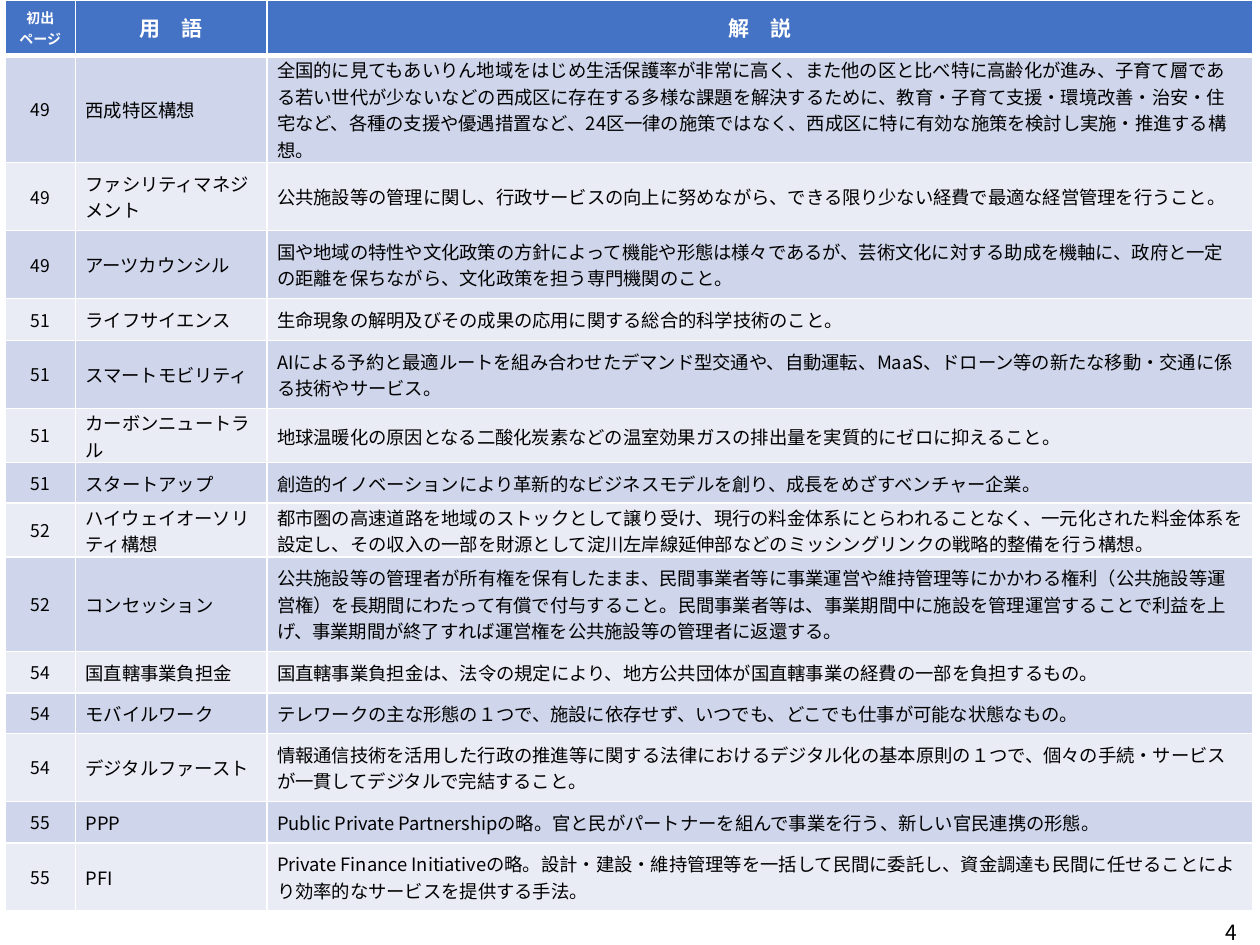
from lxml.etree import SubElement
from pptx import Presentation
from pptx.dml.color import RGBColor
from pptx.enum.text import MSO_ANCHOR as Anchor, PP_ALIGN as Align
from pptx.oxml import parse_xml
from pptx.oxml.ns import nsdecls, qn
from pptx.util import Inches, Pt

WHITE = RGBColor(0xFF, 0xFF, 0xFF)
BLACK = RGBColor(0, 0, 0)
BLUE = RGBColor(0x44, 0x72, 0xC4)
BANDS = RGBColor(0xE9, 0xEB, 0xF5), RGBColor(0xCF, 0xD5, 0xEA)
FACE = "Noto Sans CJK JP"
GRID = 100
WIDE, HIGH = 1000, 750
COLS = 56, 152, 782
HEAD = (("初出\nページ", 8), ("用　語", 12), ("解　説", 12))
HEAD_ROW = 44
LOOSE = 8, 5, 10, 5
SNUG = 8, 1, 8, 0
TIGHT = 8, 1, 1, 0
TERMS = (
    (85, SNUG, "49", "西成特区構想", "全国的に見てもあいりん地域をはじめ生活保護率が非常に高く、また他の区と比べ特に高齢化が進み、子育て層である若い世代が少ないなどの西成区に存在する多様な課題を解決するために、教育・子育て支援・環境改善・治安・住宅など、各種の支援や優遇措置など、24区一律の施策ではなく、西成区に特に有効な施策を検討し実施・推進する構想。"),
    (54, LOOSE, "49", "ファシリティマネジメント", "公共施設等の管理に関し、行政サービスの向上に努めながら、できる限り少ない経費で最適な経営管理を行うこと。"),
    (54, LOOSE, "49", "アーツカウンシル", "国や地域の特性や文化政策の方針によって機能や形態は様々であるが、芸術文化に対する助成を機軸に、政府と一定の距離を保ちながら、文化政策を担う専門機関のこと。"),
    (33, LOOSE, "51", "ライフサイエンス", "生命現象の解明及びその成果の応用に関する総合的科学技術のこと。"),
    (54, LOOSE, "51", "スマートモビリティ", "AIによる予約と最適ルートを組み合わせたデマンド型交通や、自動運転、MaaS、ドローン等の新たな移動・交通に係る技術やサービス。"),
    (43, TIGHT, "51", "カーボンニュートラル", "地球温暖化の原因となる二酸化炭素などの温室効果ガスの排出量を実質的にゼロに抑えること。"),
    (32, TIGHT, "51", "スタートアップ", "創造的イノベーションにより革新的なビジネスモデルを創り、成長をめざすベンチャー企業。"),
    (43, TIGHT, "52", "ハイウェイオーソリティ構想", "都市圏の高速道路を地域のストックとして譲り受け、現行の料金体系にとらわれることなく、一元化された料金体系を設定し、その収入の一部を財源として淀川左岸線延伸部などのミッシングリンクの戦略的整備を行う構想。"),
    (75, LOOSE, "52", "コンセッション", "公共施設等の管理者が所有権を保有したまま、民間事業者等に事業運営や維持管理等にかかわる権利（公共施設等運営権）を長期間にわたって有償で付与すること。民間事業者等は、事業期間中に施設を管理運営することで利益を上げ、事業期間が終了すれば運営権を公共施設等の管理者に返還する。"),
    (33, LOOSE, "54", "国直轄事業負担金", "国直轄事業負担金は、法令の規定により、地方公共団体が国直轄事業の経費の一部を負担するもの。"),
    (32, SNUG, "54", "モバイルワーク", "テレワークの主な形態の１つで、施設に依存せず、いつでも、どこでも仕事が可能な状態なもの。"),
    (54, LOOSE, "54", "デジタルファースト", "情報通信技術を活用した行政の推進等に関する法律におけるデジタル化の基本原則の１つで、個々の手続・サービスが一貫してデジタルで完結すること。"),
    (33, LOOSE, "55", "PPP", "Public Private Partnershipの略。官と民がパートナーを組んで事業を行う、新しい官民連携の形態。"),
    (54, (8, 5, 8, 5), "55", "PFI", "Private Finance Initiativeの略。設計・建設・維持管理等を一括して民間に委託し、資金調達も民間に任せることにより効率的なサービスを提供する手法。"),
)


def span(units):
    """Turn grid units into a length."""
    return Inches(units / GRID)


def write(frame, text, size, color, align, bold=False):
    """Fill a text frame with one paragraph style."""
    frame.text = text
    for para in frame.paragraphs:
        para.alignment = align
        font = para.font
        font.name, font.size, font.bold = FACE, Pt(size), bold
        font.color.rgb = color
        SubElement(font._rPr, qn("a:ea")).set("typeface", FACE)


def rule(cell, top, base):
    """Draw white borders with the given top and bottom widths."""
    props = cell._tc.get_or_add_tcPr()
    for spot, (side, width) in enumerate(zip("LRTB", (1, 1, top, base))):
        props.insert(spot, parse_xml(
            f'<a:ln{side} {nsdecls("a")} w="{Pt(width)}"><a:solidFill>'
            f'<a:srgbClr val="{WHITE}"/></a:solidFill></a:ln{side}>'))


def pad(cell, edges):
    """Set the left, top, right and bottom cell margins."""
    (cell.margin_left, cell.margin_top,
     cell.margin_right, cell.margin_bottom) = map(span, edges)


def paint(cell, fill, top=1, base=1):
    """Give a cell its fill, borders and anchor."""
    cell.fill.solid()
    cell.fill.fore_color.rgb = fill
    cell.vertical_anchor = Anchor.MIDDLE
    rule(cell, top, base)


def glossary(slide, left, top):
    """Place the table of terms at the given corner."""
    highs = [HEAD_ROW] + [term[0] for term in TERMS]
    table = slide.shapes.add_table(
        len(highs), len(COLS), span(left), span(top),
        span(sum(COLS)), span(sum(highs))).table
    table.first_row = table.horz_banding = False
    for col, wide in zip(table.columns, COLS):
        col.width = span(wide)
    for row, high in zip(table.rows, highs):
        row.height = span(high)
    for col, (text, size) in enumerate(HEAD):
        cell = table.cell(0, col)
        paint(cell, BLUE, base=3)
        write(cell.text_frame, text, size, WHITE, Align.CENTER, True)
    for row, (_, edges, *texts) in enumerate(TERMS, 1):
        for col, text in enumerate(texts):
            cell = table.cell(row, col)
            paint(cell, BANDS[row % 2], top=3 if row == 1 else 1)
            if col:
                pad(cell, edges)
            write(cell.text_frame, text, 10.5 if col else 10, BLACK,
                  Align.LEFT if col else Align.CENTER)


def folio(slide, left, top, wide, high):
    """Place the page number in the given box."""
    frame = slide.shapes.add_textbox(*map(span, (left, top, wide, high))).text_frame
    frame.word_wrap = True
    frame.vertical_anchor = Anchor.MIDDLE
    write(frame, "4", 12, BLACK, Align.RIGHT)


def main():
    """Build and save the slide."""
    deck = Presentation()
    deck.slide_width, deck.slide_height = span(WIDE), span(HIGH)
    slide = deck.slides.add_slide(deck.slide_layouts[6])
    glossary(slide, 4, 0)
    folio(slide, 949, 724, 43, 31)
    deck.save("out.pptx")


if __name__ == "__main__":
    main()
